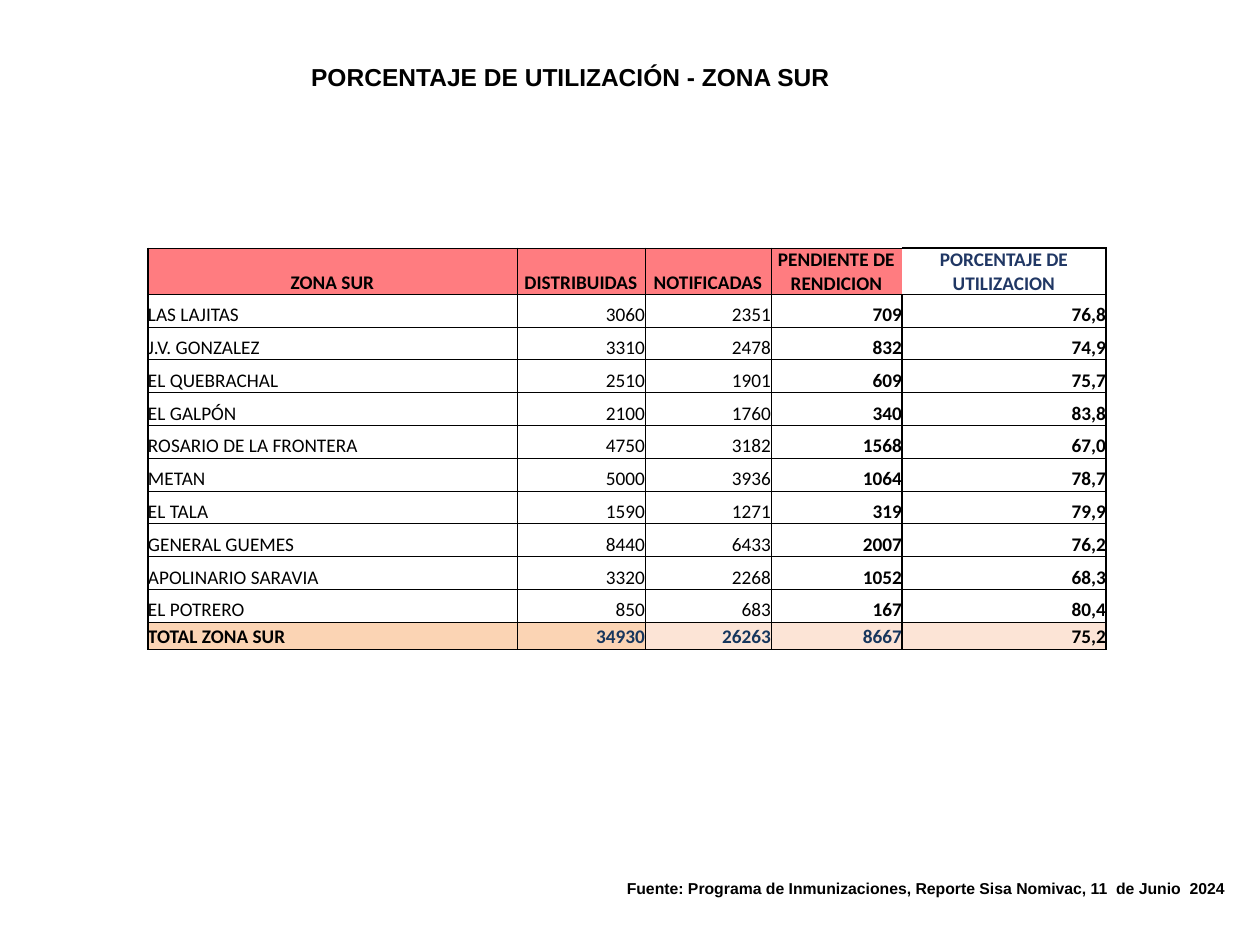
"""Build the slide with the vaccine utilization table of the southern zone."""
from lxml.etree import SubElement
from pptx import Presentation
from pptx.dml.color import RGBColor
from pptx.enum.text import MSO_ANCHOR as Anchor, PP_ALIGN as Align
from pptx.oxml.ns import qn
from pptx.util import Pt

TITLE = "PORCENTAJE DE UTILIZACIÓN - ZONA SUR"
SOURCE = "Fuente: Programa de Inmunizaciones, Reporte Sisa Nomivac, 11  de Junio  2024"
HEADINGS = ("ZONA SUR", "DISTRIBUIDAS", "NOTIFICADAS", "PENDIENTE DE RENDICION",
            "PORCENTAJE DE UTILIZACION")
TOWNS = [
    ("LAS LAJITAS", "3060", "2351", "709", "76,8"),
    ("J.V. GONZALEZ", "3310", "2478", "832", "74,9"),
    ("EL QUEBRACHAL", "2510", "1901", "609", "75,7"),
    ("EL GALPÓN", "2100", "1760", "340", "83,8"),
    ("ROSARIO DE LA FRONTERA", "4750", "3182", "1568", "67,0"),
    ("METAN", "5000", "3936", "1064", "78,7"),
    ("EL TALA", "1590", "1271", "319", "79,9"),
    ("GENERAL GUEMES", "8440", "6433", "2007", "76,2"),
    ("APOLINARIO SARAVIA", "3320", "2268", "1052", "68,3"),
    ("EL POTRERO", "850", "683", "167", "80,4"),
]
TOTAL = ("TOTAL ZONA SUR", "34930", "26263", "8667", "75,2")

BLACK = "000000"
HEADING_FILLS = ("FF7C80",) * 4 + (None,)
HEADING_INKS = (BLACK,) * 4 + ("203764",)
TOTAL_FILLS = ("FBD4B4",) * 2 + ("FCE4D6",) * 3
TOTAL_INKS = (BLACK,) + ("17365D",) * 3 + (BLACK,)

COLUMN_WIDTHS = (369, 128, 126, 131, 204)
HEADING_HEIGHT, TOWNS_HEIGHT, TOTAL_HEIGHT = 46, 328, 27
TABLE_LEFT, TABLE_TOP = 148, 248
THIN, THICK = 0.5, 1
LAST = len(HEADINGS) - 1


def px(length):
    return round(length * 914400 / 126)


def rgb(value):
    return RGBColor.from_string(value)


def style(paragraph, size, face, ink=BLACK, bold=True, align=Align.CENTER):
    paragraph.alignment = align
    font = paragraph.font
    font.size, font.name, font.bold = Pt(size), face, bold
    font.color.rgb = rgb(ink)


def place(box, left, top, width, height):
    box.left, box.top, box.width, box.height = map(px, (left, top, width, height))


def set_borders(cell, **widths):
    props = cell._tc.get_or_add_tcPr()
    for side in "LRTB":
        width = widths[side]
        line = SubElement(props, qn(f"a:ln{side}"), w=str(Pt(width or THIN)))
        if width:
            fill = SubElement(line, qn("a:solidFill"))
            SubElement(fill, qn("a:srgbClr"), val=BLACK)
        else:
            SubElement(line, qn("a:noFill"))


def fill_cell(cell, text, col, heading, total):
    left = THICK if col in (0, LAST) else THIN
    right = THICK if col >= LAST - 1 else THIN
    top = THIN
    if heading and col == LAST:
        left, top = None, THICK
    elif heading and col == LAST - 1:
        right = None
    set_borders(cell, L=left, R=right, T=top, B=THIN)

    fills = HEADING_FILLS if heading else TOTAL_FILLS if total else (None,) * 5
    inks = HEADING_INKS if heading else TOTAL_INKS if total else (BLACK,) * 5
    if fills[col]:
        cell.fill.solid()
        cell.fill.fore_color.rgb = rgb(fills[col])
    else:
        cell.fill.background()
    cell.margin_left = cell.margin_right = cell.margin_top = cell.margin_bottom = 0
    cell.vertical_anchor = Anchor.MIDDLE if heading and col == LAST else Anchor.BOTTOM
    cell.text = text
    align = Align.CENTER if heading else Align.RIGHT if col else Align.LEFT
    bold = heading or total or col >= LAST - 1
    style(cell.text_frame.paragraphs[0], 11, "Calibri", inks[col], bold, align)


def add_utilization(slide):
    rows = [HEADINGS, *TOWNS, TOTAL]
    heights = [HEADING_HEIGHT] + [TOWNS_HEIGHT / len(TOWNS)] * len(TOWNS) + [TOTAL_HEIGHT]
    table = slide.shapes.add_table(
        len(rows), len(HEADINGS), px(TABLE_LEFT), px(TABLE_TOP),
        px(sum(COLUMN_WIDTHS)), px(sum(heights))).table
    table.first_row = table.horz_banding = False
    for column, width in zip(table.columns, COLUMN_WIDTHS):
        column.width = px(width)
    for r, (values, height) in enumerate(zip(rows, heights)):
        table.rows[r].height = px(height)
        for col, text in enumerate(values):
            fill_cell(table.cell(r, col), text, col, r == 0, r == len(rows) - 1)


def main():
    prs = Presentation()
    prs.slide_width, prs.slide_height = px(1260), px(945)
    slide = prs.slides.add_slide(prs.slide_layouts[5])

    title = slide.shapes.title
    place(title, 203, 55, 735, 43)
    title.text_frame.text = TITLE
    title.text_frame.vertical_anchor = Anchor.MIDDLE
    style(title.text_frame.paragraphs[0], 14, "Arial")

    source = slide.shapes.add_textbox(0, 0, 0, 0)
    place(source, 605, 873, 632, 37)
    source.text_frame.word_wrap = True
    source.text_frame.text = SOURCE
    style(source.text_frame.paragraphs[0], 9, "Arial", align=Align.RIGHT)

    add_utilization(slide)
    prs.save("out.pptx")


if __name__ == "__main__":
    main()
